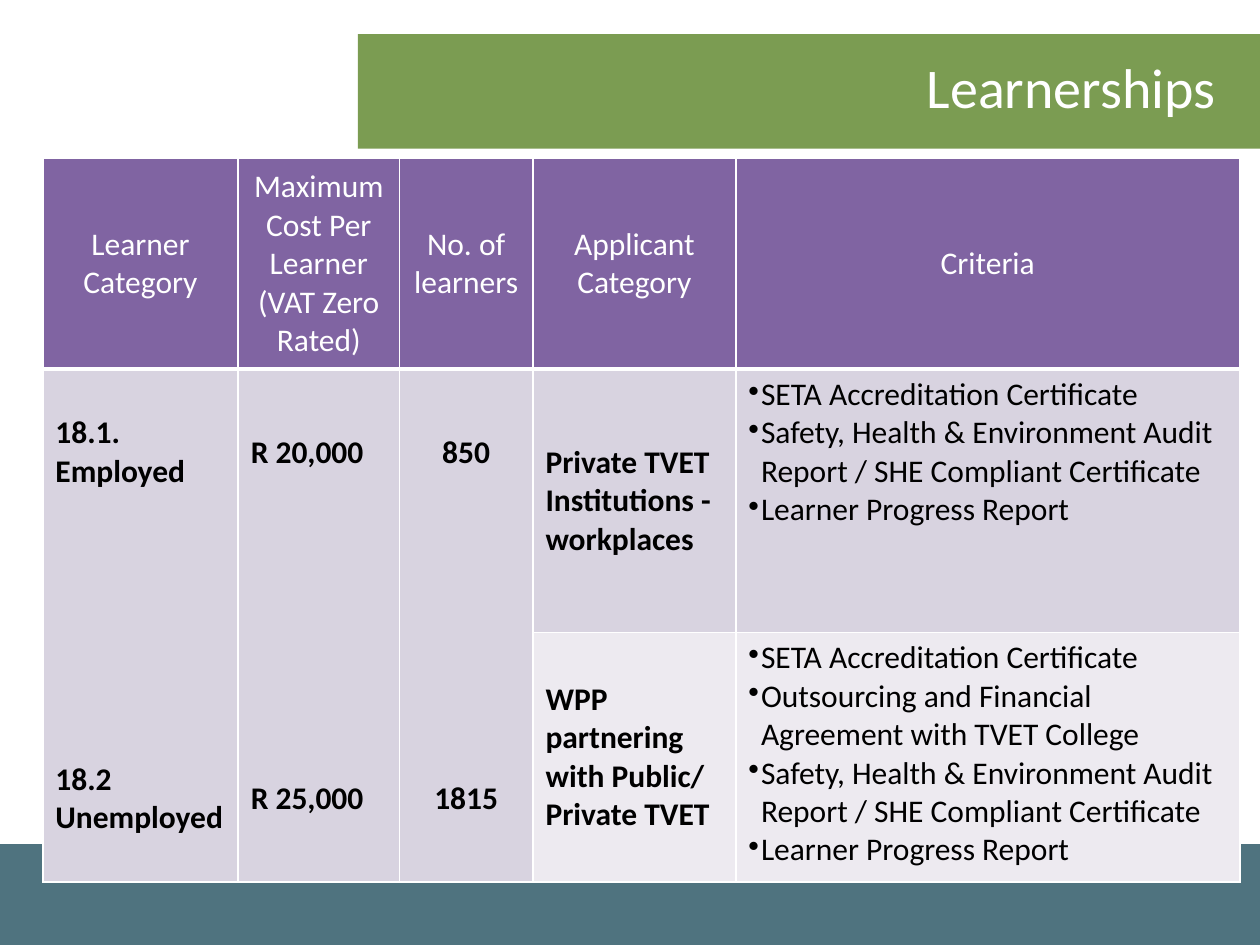
from lxml import etree
from pptx import Presentation
from pptx.dml.color import RGBColor
from pptx.enum import shapes, text
from pptx.oxml.ns import qn
from pptx.util import Inches, Pt

FONT = "Calibri"
LINE = 22
COLORS = {
    "footer": "4F737F",
    "band": "7B9C52",
    "header": "8064A2",
    "row_dark": "D8D3E0",
    "row_light": "EDEAF0",
    "white": "FFFFFF",
    "black": "000000",
}
TITLE = "Learnerships"
BARS = [
    ("footer", (0, 6.7, 10, 0.8)),
    ("band", (2.84, 0.27, 7.16, 0.91)),
]
HEADERS = [
    "Learner Category",
    "Maximum Cost Per Learner (VAT Zero Rated)",
    "No. of learners",
    "Applicant Category",
    "Criteria",
]
MERGED = [
    (["18.1.", "Employed", "18.2", "Unemployed"], 2, 7, False),
    (["R 20,000", "R 25,000"], 1, 8, False),
    (["850", "1815"], 1, 8, True),
]
APPLICANTS = [
    ("Private TVET Institutions - workplaces", "row_dark", [
        "SETA Accreditation Certificate",
        "Safety, Health & Environment Audit Report / SHE Compliant Certificate",
        "Learner Progress Report",
    ]),
    ("WPP partnering with Public/ Private TVET", "row_light", [
        "SETA Accreditation Certificate",
        "Outsourcing and Financial Agreement with TVET College",
        "Safety, Health & Environment Audit Report / SHE Compliant Certificate",
        "Learner Progress Report",
    ]),
]
COL_WIDTHS = [1.55, 1.28, 1.06, 1.61, 4.0]
ROW_HEIGHTS = [1.67, 2.09, 1.98]
TABLE_LEFT, TABLE_TOP = 0.34, 1.26


def rgb(name):
    return RGBColor.from_string(COLORS[name])


def style_run(r, size, color, bold=False):
    r.font.name = FONT
    r.font.size = Pt(size)
    r.font.bold = bold
    r.font.color.rgb = rgb(color)


def add_bullet(p):
    pPr = p._p.get_or_add_pPr()
    pPr.set("marL", str(Inches(0.1)))
    pPr.set("indent", str(-Inches(0.1)))
    etree.SubElement(pPr, qn("a:buChar")).set("char", "•")


def fill_cell(cell, lines, fill, color="black", bold=False, center=False,
              bullets=False):
    cell.fill.solid()
    cell.fill.fore_color.rgb = rgb(fill)
    anchor = text.MSO_ANCHOR
    cell.vertical_anchor = anchor.TOP if bullets else anchor.MIDDLE
    tf = cell.text_frame
    tf.text = "\n".join(lines)
    for p in tf.paragraphs:
        p.alignment = text.PP_ALIGN.CENTER if center else text.PP_ALIGN.LEFT
        if bullets:
            add_bullet(p)
        for r in p.runs:
            style_run(r, 18, color, bold)


def set_borders(cell, widths):
    tcPr = cell._tc.get_or_add_tcPr()
    for i, (side, width) in enumerate(widths.items()):
        ln = etree.Element(qn(f"a:ln{side}"), w=str(Pt(width)))
        solid = etree.SubElement(ln, qn("a:solidFill"))
        etree.SubElement(solid, qn("a:srgbClr")).set("val", COLORS["white"])
        tcPr.insert(i, ln)


def add_bars(s):
    for color, box in BARS:
        sp = s.shapes.add_shape(shapes.MSO_SHAPE.RECTANGLE, *map(Inches, box))
        sp.shadow.inherit = False
        sp.fill.solid()
        sp.fill.fore_color.rgb = rgb(color)
        sp.line.fill.background()


def add_title(s):
    title = s.shapes.title
    s.shapes._spTree.append(title._element)
    title.left, title.top = Inches(0.75), Inches(0.06)
    title.width, title.height = Inches(9), Inches(1.25)
    tf = title.text_frame
    tf.text = TITLE
    tf.vertical_anchor = text.MSO_ANCHOR.MIDDLE
    p = tf.paragraphs[0]
    p.alignment = text.PP_ALIGN.RIGHT
    style_run(p.runs[0], 32, "white")


def add_learner_table(s):
    table = s.shapes.add_table(
        len(ROW_HEIGHTS), len(COL_WIDTHS), Inches(TABLE_LEFT),
        Inches(TABLE_TOP), Inches(sum(COL_WIDTHS)), Inches(sum(ROW_HEIGHTS)),
    ).table
    for col, width in zip(table.columns, COL_WIDTHS):
        col.width = Inches(width)
    for row, height in zip(table.rows, ROW_HEIGHTS):
        row.height = Inches(height)

    for c, label in enumerate(HEADERS):
        cell = table.cell(0, c)
        fill_cell(cell, [label], "header", "white", center=True)
        set_borders(cell, {"L": 1, "R": 1, "T": 1, "B": 3})

    for c, (lines, second, gap, center) in enumerate(MERGED):
        cell = table.cell(1, c)
        cell.merge(table.cell(2, c))
        fill_cell(cell, lines, "row_dark", bold=True, center=center)
        cell.text_frame.paragraphs[second].space_before = Pt(gap * LINE)

    for i, (applicant, fill, criteria) in enumerate(APPLICANTS, start=1):
        fill_cell(table.cell(i, 3), [applicant], fill, bold=True)
        fill_cell(table.cell(i, 4), criteria, fill, bullets=True)


def main():
    prs = Presentation()
    prs.slide_width, prs.slide_height = Inches(10), Inches(7.5)
    s = prs.slides.add_slide(prs.slide_layouts[5])
    add_bars(s)
    add_title(s)
    add_learner_table(s)
    prs.save("out.pptx")


if __name__ == "__main__":
    main()
